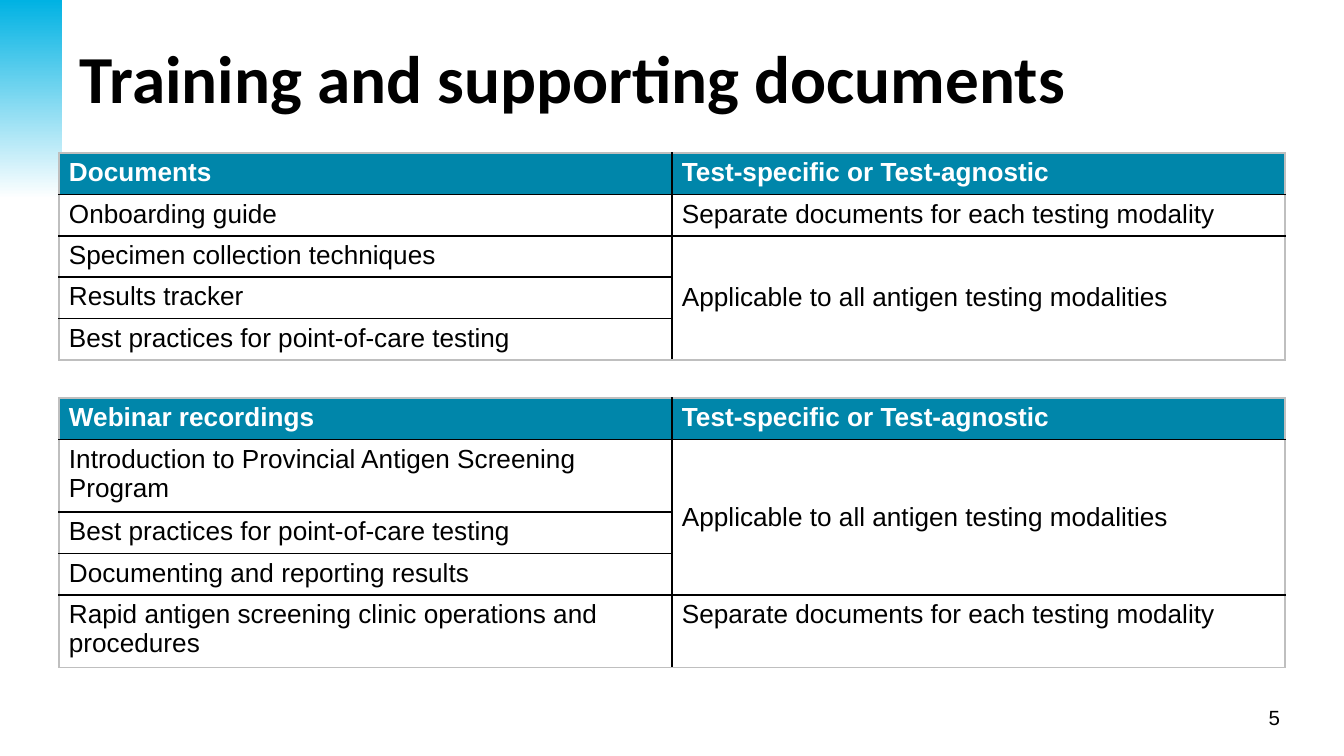
from lxml.etree import SubElement
from pptx import Presentation
from pptx.dml.color import RGBColor
from pptx.enum.shapes import MSO_SHAPE
from pptx.enum.text import MSO_ANCHOR, PP_ALIGN
from pptx.oxml.ns import qn
from pptx.util import Emu, Pt

EMU_PER_PX = 914400 / 134.4

BLACK = RGBColor(0x00, 0x00, 0x00)
WHITE = RGBColor(0xFF, 0xFF, 0xFF)
SKY = RGBColor(0x00, 0xB2, 0xE3)
TEAL = RGBColor(0x00, 0x86, 0xAA)
GREY = RGBColor(0xBF, 0xBF, 0xBF)

ALL_MODALITIES = "Applicable to all antigen testing modalities"
EACH_MODALITY = "Separate documents for each testing modality"
SCOPE_HEADING = "Test-specific or Test-agnostic"
ROW = 41
TALL_ROW = 70

# Each row is (height, subject, scope); a scope of None continues the cell above.
DOCUMENTS = [
    (ROW, "Documents", SCOPE_HEADING),
    (ROW, "Onboarding guide", EACH_MODALITY),
    (ROW, "Specimen collection techniques", ALL_MODALITIES),
    (ROW, "Results tracker", None),
    (ROW, "Best practices for point-of-care testing", None),
]
WEBINARS = [
    (ROW, "Webinar recordings", SCOPE_HEADING),
    (TALL_ROW, "Introduction to Provincial Antigen Screening Program", ALL_MODALITIES),
    (ROW, "Best practices for point-of-care testing", None),
    (ROW, "Documenting and reporting results", None),
    (TALL_ROW, "Rapid antigen screening clinic operations and procedures", EACH_MODALITY),
]


def px(length):
    return Emu(round(length * EMU_PER_PX))


def format_runs(text_frame, font_name, size, color, bold=False):
    for paragraph in text_frame.paragraphs:
        for run in paragraph.runs:
            run.font.name = font_name
            run.font.size = Pt(size)
            run.font.color.rgb = color
            run.font.bold = bold


def set_margins(target, horizontal, vertical):
    target.margin_left = target.margin_right = px(horizontal)
    target.margin_top = target.margin_bottom = px(vertical)


def add_corner_gradient(slide, left, top, width, height):
    shape = slide.shapes.add_shape(
        MSO_SHAPE.RECTANGLE, px(left), px(top), px(width), px(height))
    shape.shadow.inherit = False
    shape.line.fill.background()
    shape.fill.gradient()
    shape.fill.gradient_angle = 270
    for stop, color in zip(shape.fill.gradient_stops, (SKY, WHITE)):
        stop.color.rgb = color


def add_text(slide, left, top, width, height, text):
    text_box = slide.shapes.add_textbox(px(left), px(top), px(width), px(height))
    text_frame = text_box.text_frame
    text_frame.word_wrap = True
    set_margins(text_frame, 13, 12)
    text_frame.text = text
    return text_frame


def add_title(slide, left, top, width, height, text):
    text_frame = add_text(slide, left, top, width, height, text)
    format_runs(text_frame, "Calibri", 36, BLACK, bold=True)


def add_slide_number(slide, left, top, width, height, number):
    text_frame = add_text(slide, left, top, width, height, number)
    set_margins(text_frame, 13, 0)
    text_frame.vertical_anchor = MSO_ANCHOR.MIDDLE
    text_frame.paragraphs[0].alignment = PP_ALIGN.RIGHT
    format_runs(text_frame, "Arial", 11, BLACK)


def set_borders(cell, outer_edges):
    """Draw grey lines on the table's outer edges and black lines elsewhere."""
    properties = cell._tc.get_or_add_tcPr()
    for edge in "LRTB":
        color = GREY if edge in outer_edges else BLACK
        line = SubElement(properties, qn(f"a:ln{edge}"), w=str(Pt(1)))
        fill = SubElement(line, qn("a:solidFill"))
        SubElement(fill, qn("a:srgbClr"), val=str(color))


def add_scope_table(slide, left, top, width, rows):
    height = sum(row_height for row_height, _, _ in rows)
    table = slide.shapes.add_table(
        len(rows), 2, px(left), px(top), px(width), px(height)).table
    table.horz_banding = False
    table.first_row = False
    for column in table.columns:
        column.width = px(width / 2)

    scope_start = 0
    for index, (row_height, subject, scope) in enumerate(rows):
        table.rows[index].height = px(row_height)
        table.cell(index, 0).text_frame.text = subject
        if scope:
            scope_start = index
            table.cell(index, 1).text_frame.text = scope
        elif index + 1 == len(rows) or rows[index + 1][2]:
            table.cell(scope_start, 1).merge(table.cell(index, 1))

    for index in range(len(rows)):
        for column, side in enumerate("LR"):
            cell = table.cell(index, column)
            is_header = index == 0
            is_last = index + cell.span_height == len(rows)
            set_borders(cell, side + "T" * is_header + "B" * is_last)
            set_margins(cell, 10, 5)
            if is_header:
                cell.fill.solid()
                cell.fill.fore_color.rgb = TEAL
            else:
                cell.fill.background()
            if cell.is_merge_origin:
                cell.vertical_anchor = MSO_ANCHOR.MIDDLE
            format_runs(cell.text_frame, "Arial", 14,
                        WHITE if is_header else BLACK, bold=is_header)


def main():
    presentation = Presentation()
    presentation.slide_width = px(1344)
    presentation.slide_height = px(756)
    slide = presentation.slides.add_slide(presentation.slide_layouts[6])
    add_slide_number(slide, 1136, 698, 157, 39, "5")
    add_corner_gradient(slide, 0, 0, 62, 199)
    add_title(slide, 67, 24, 1050, 129, "Training and supporting documents")
    add_scope_table(slide, 59, 153, 1226, DOCUMENTS)
    add_scope_table(slide, 59, 398, 1226, WEBINARS)
    presentation.save("out.pptx")


if __name__ == "__main__":
    main()
